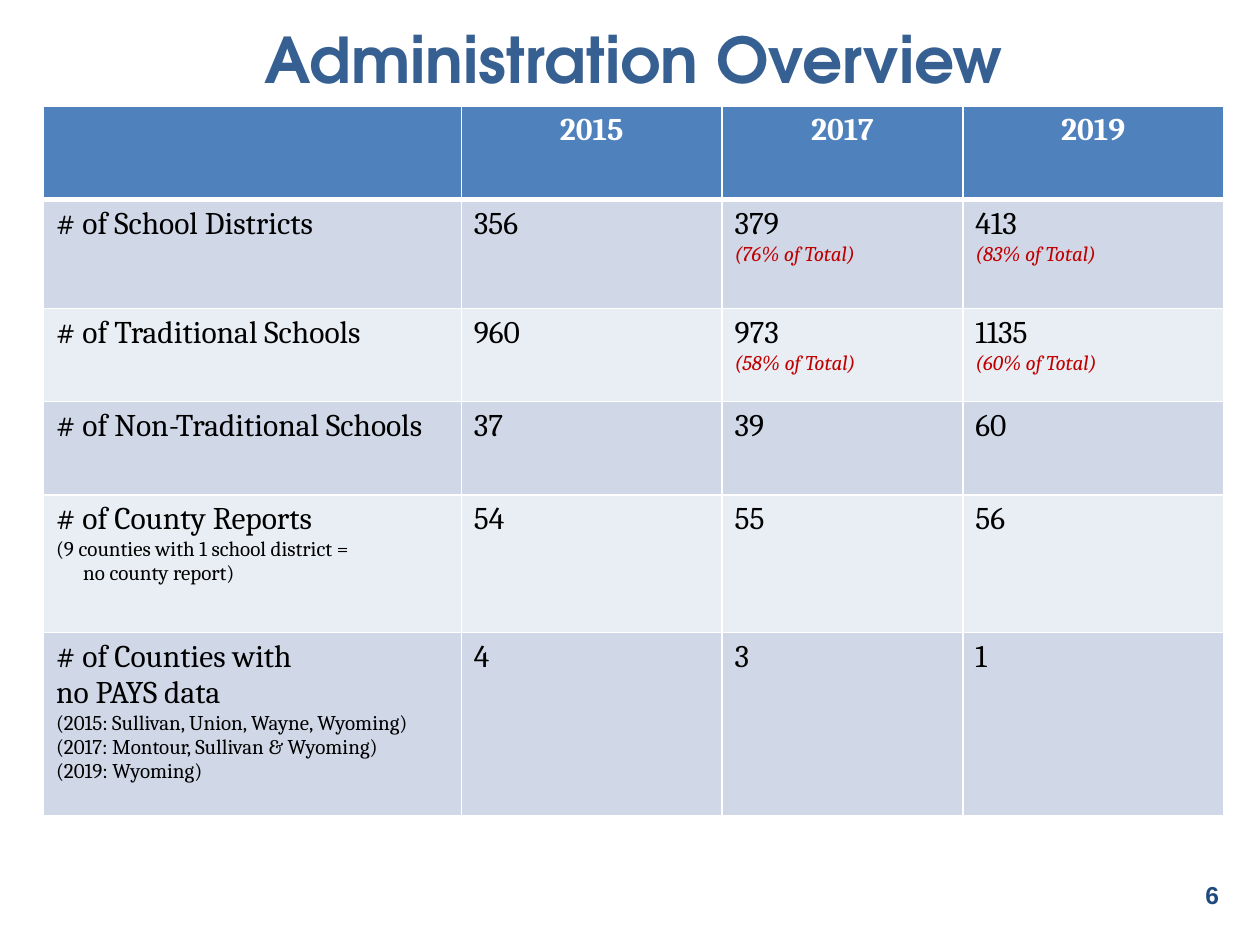
from lxml.etree import SubElement
from pptx import Presentation
from pptx.dml.color import RGBColor
from pptx.enum.text import MSO_ANCHOR as Anchor, PP_ALIGN as Align
from pptx.oxml.ns import qn
from pptx.util import Pt

COLORS = {"title": "376092", "header": "4F81BD", "odd": "D0D8E8", "even": "E9EDF4",
          "white": "FFFFFF", "black": "000000", "share": "C00000", "number": "1F497D"}

TITLE = "Administration Overview"
PAGE_NUMBER = "6"
HEADER = ["", "2015", "2017", "2019"]
ROWS = [
    [["# of School Districts"], ["356"], ["379", "(76% of Total)"], ["413", "(83% of Total)"]],
    [["# of Traditional Schools"], ["960"], ["973", "(58% of Total)"], ["1135", "(60% of Total)"]],
    [["# of Non-Traditional Schools"], ["37"], ["39"], ["60"]],
    [["# of County Reports", "(9 counties with 1 school district =\vno county report)"],
     ["54"], ["55"], ["56"]],
    [["# of Counties with\vno PAYS data", "(2015: Sullivan, Union, Wayne, Wyoming)",
      "(2017: Montour, Sullivan & Wyoming)", "(2019: Wyoming)"], ["4"], ["3"], ["1"]],
]
COLUMN_WIDTHS = [238.8, 149, 137.6, 149]
ROW_HEIGHTS = [53.3, 62.3, 53.3, 53.3, 78.5, 105.1]
TABLE_LEFT, TABLE_TOP = 24.8, 60.7
HANGING = 15.5

FORMATS = {
    "title": {"name": "TeX Gyre Adventor", "size": Pt(36), "bold": True, "italic": False},
    "number": {"name": "Arial", "size": Pt(14), "bold": True},
    "header": {"name": "Cambria", "size": Pt(18), "bold": True},
    "main": {"name": "Cambria", "size": Pt(18), "bold": False},
    "note": {"name": "Cambria", "size": Pt(12), "bold": False},
    "share": {"name": "Cambria", "size": Pt(12), "bold": False, "italic": True},
}


def write(para, text, style, color, align):
    para.text = text
    para.alignment = align
    for font in [para.font] + [span.font for span in para.runs]:
        for key, value in FORMATS[style].items():
            setattr(font, key, value)
        font.color.rgb = RGBColor.from_string(COLORS[color])


def hang(para):
    properties = para._p.get_or_add_pPr()
    properties.set("marL", str(Pt(HANGING)))
    properties.set("indent", str(-Pt(HANGING)))


def paint(cell, fill, widths):
    properties = cell._tc.get_or_add_tcPr()
    for side, width in widths.items():
        line = SubElement(properties, qn("a:ln" + side), w=str(Pt(width)))
        solid = SubElement(line, qn("a:solidFill"))
        SubElement(solid, qn("a:srgbClr"), val=COLORS["white"])
    cell.fill.solid()
    cell.fill.fore_color.rgb = RGBColor.from_string(COLORS[fill])


def place(shape, left, top, width, height):
    shape.left, shape.top, shape.width, shape.height = map(Pt, (left, top, width, height))


def add_table(page):
    frame = page.shapes.add_table(
        len(ROW_HEIGHTS), len(COLUMN_WIDTHS), Pt(TABLE_LEFT), Pt(TABLE_TOP),
        Pt(sum(COLUMN_WIDTHS)), Pt(sum(ROW_HEIGHTS)))
    table = frame.table
    table.horz_banding = False
    for column, width in zip(table.columns, COLUMN_WIDTHS):
        column.width = Pt(width)
    for row, height in zip(table.rows, ROW_HEIGHTS):
        row.height = Pt(height)
    for index, text in enumerate(HEADER):
        cell = table.cell(0, index)
        paint(cell, "header", {"L": 1, "R": 1, "T": 1, "B": 3})
        write(cell.text_frame.paragraphs[0], text, "header", "white", Align.CENTER)
    for row_index, row in enumerate(ROWS, 1):
        for column_index, lines in enumerate(row):
            cell = table.cell(row_index, column_index)
            top = 3 if row_index == 1 else 1
            paint(cell, "odd" if row_index % 2 else "even", {"L": 1, "R": 1, "T": top, "B": 1})
            for line_index, text in enumerate(lines):
                body = cell.text_frame
                para = body.add_paragraph() if line_index else body.paragraphs[0]
                style = "main" if line_index == 0 else "share" if column_index else "note"
                write(para, text, style, "share" if style == "share" else "black", Align.LEFT)
                if style == "note" and "\v" in text:
                    hang(para)


def main():
    deck = Presentation()
    deck.slide_width, deck.slide_height = Pt(720), Pt(540)
    page = deck.slides.add_slide(deck.slide_layouts[5])

    title = page.shapes.title
    place(title, 16, 6.5, 692.5, 54)
    title.text_frame.vertical_anchor = Anchor.MIDDLE
    write(title.text_frame.paragraphs[0], TITLE, "title", "title", Align.CENTER)

    add_table(page)

    number = page.shapes.add_textbox(Pt(671.8), Pt(497.5), Pt(41.8), Pt(28))
    number.text_frame.word_wrap = True
    number.text_frame.vertical_anchor = Anchor.MIDDLE
    write(number.text_frame.paragraphs[0], PAGE_NUMBER, "number", "number", Align.CENTER)

    deck.save("out.pptx")


if __name__ == "__main__":
    main()
